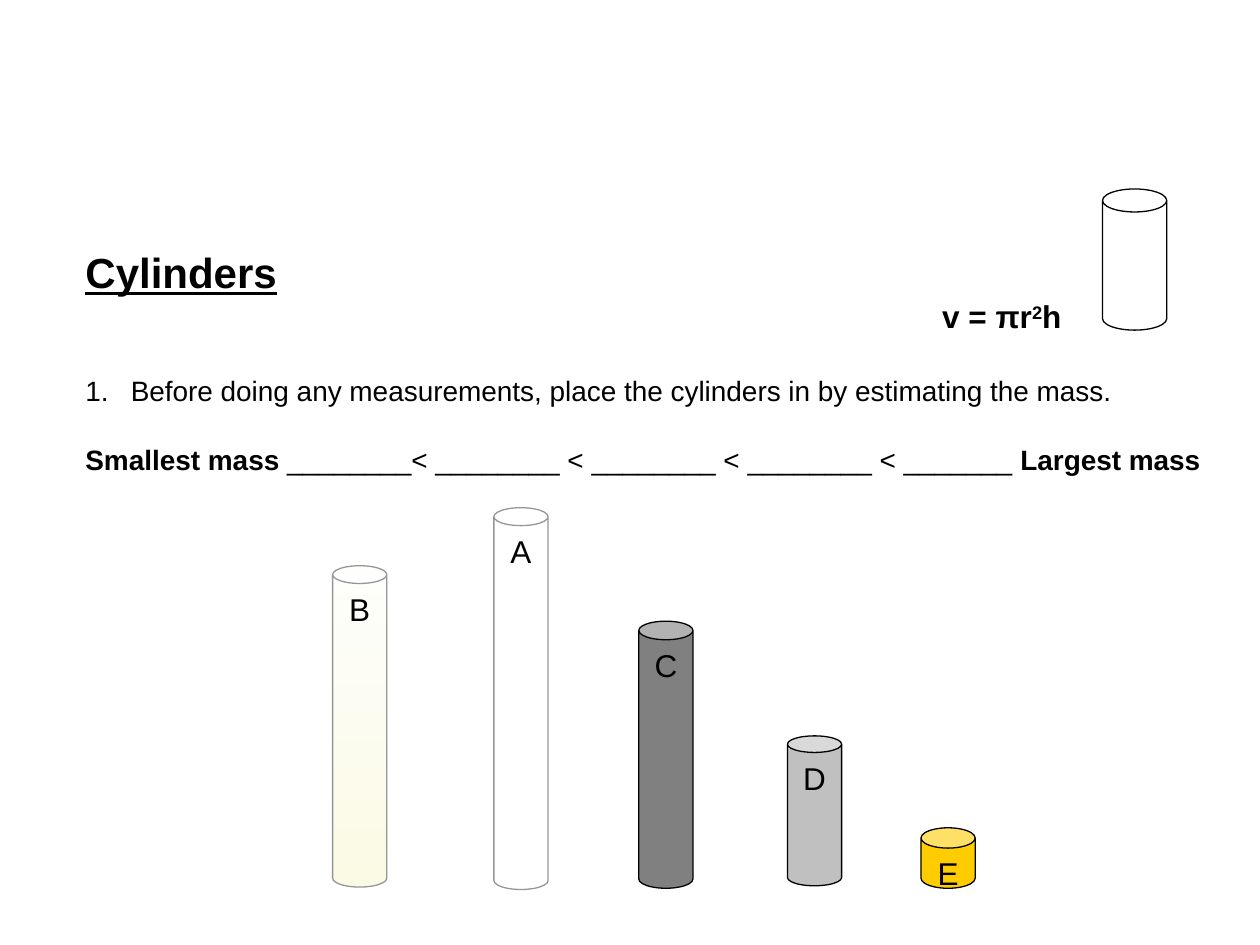
from lxml import etree
from pptx import Presentation
from pptx import util as u
from pptx.dml.color import RGBColor
from pptx.enum import shapes, text
from pptx.oxml.ns import qn

WIDTH, HEIGHT = 10, 7.5
FONT = "Arial"
COLORS = {
    "black": "000000", "white": "FFFFFF", "edge": "969696",
    "dark": "808080", "light": "C0C0C0", "gold": "FFCC00",
    "cream": "FBFAE5", "pale cream": "FEFEFB",
}
CAN_WIDTH = 0.43
# letter, left, top, height, rim adjustment, fill colours, outline
CANS = [
    ("C", 5.07, 4.93, 2.12, 0.343, ["dark"], "black"),
    ("A", 3.92, 4.03, 3.03, 0.331, ["white"], "edge"),
    ("B", 2.64, 4.49, 2.55, 0.327, ["pale cream", "cream"], "edge"),
    ("E", 7.31, 6.57, 0.48, 0.375, ["gold"], "black"),
    ("D", 6.25, 5.84, 1.19, 0.306, ["light"], "black"),
]


def color(name):
    return RGBColor.from_string(COLORS[name])


def add_run(paragraph, words, size, bold=False, underline=False):
    run = paragraph.add_run()
    run.text = words
    font = run.font
    font.name, font.size = FONT, u.Pt(size)
    font.bold, font.underline = bold, underline
    font.color.rgb = color("black")
    return run


def add_paragraph(frame, gap=0, margin=0, indent=0):
    """Start a paragraph; gap is in points, margin and indent in inches."""
    paragraph = frame.add_paragraph() if frame.paragraphs[0].runs else frame.paragraphs[0]
    paragraph.space_before = u.Pt(gap)
    properties = paragraph._p.get_or_add_pPr()
    properties.set("marL", str(u.Inches(margin)))
    properties.set("indent", str(u.Inches(indent)))
    return paragraph


def number(paragraph):
    bullet = etree.SubElement(paragraph._p.get_or_add_pPr(), qn("a:buAutoNum"))
    bullet.set("type", "arabicPeriod")


def add_can(slide, left, top, width, height, rim, fills, outline, letter=""):
    can = slide.shapes.add_shape(
        shapes.MSO_SHAPE.CAN, *map(u.Inches, (left, top, width, height)))
    can.adjustments[0] = rim
    can.shadow.inherit = False
    can.line.color.rgb = color(outline)
    can.line.width = u.Pt(0.75)
    if len(fills) == 1:
        can.fill.solid()
        can.fill.fore_color.rgb = color(fills[0])
    else:
        can.fill.gradient()
        can.fill.gradient_angle = 270
        for stop, name in zip(can.fill.gradient_stops, fills):
            stop.color.rgb = color(name)
    if letter:
        can.text_frame.vertical_anchor = text.MSO_ANCHOR.TOP
        paragraph = can.text_frame.paragraphs[0]
        paragraph.alignment = text.PP_ALIGN.CENTER
        add_run(paragraph, letter, 18)


def add_worksheet_text(slide):
    box = slide.shapes.add_textbox(*map(u.Inches, (0.58, 1.96, 9.3, 2.04)))
    frame = box.text_frame
    frame.word_wrap = True
    frame.margin_top = frame.margin_bottom = 0

    add_run(add_paragraph(frame), "Cylinders", 24, bold=True, underline=True)

    formula = add_paragraph(frame, margin=6.8)
    add_run(formula, "v = πr", 18, bold=True)
    square = add_run(formula, "2", 18, bold=True)
    square._r.get_or_add_rPr().set("baseline", "30000")
    add_run(formula, "h", 18, bold=True)

    task = add_paragraph(frame, gap=22, margin=0.36, indent=-0.36)
    number(task)
    add_run(task, "Before doing any measurements, place the cylinders in "
                  "by estimating the mass.", 16)

    ranking = add_paragraph(frame, gap=20)
    add_run(ranking, "Smallest mass", 16, bold=True)
    add_run(ranking, " ________< ________ < ________ < ________ < _______ ", 16)
    add_run(ranking, "Largest mass", 16, bold=True)


def main():
    presentation = Presentation()
    presentation.slide_width = u.Inches(WIDTH)
    presentation.slide_height = u.Inches(HEIGHT)
    slide = presentation.slides.add_slide(presentation.slide_layouts[6])

    add_can(slide, 8.75, 1.5, 0.51, 1.12, 0.358, ["white"], "black")
    add_worksheet_text(slide)
    for letter, left, top, height, rim, fills, outline in CANS:
        add_can(slide, left, top, CAN_WIDTH, height, rim, fills, outline, letter)

    presentation.save("out.pptx")


if __name__ == "__main__":
    main()
